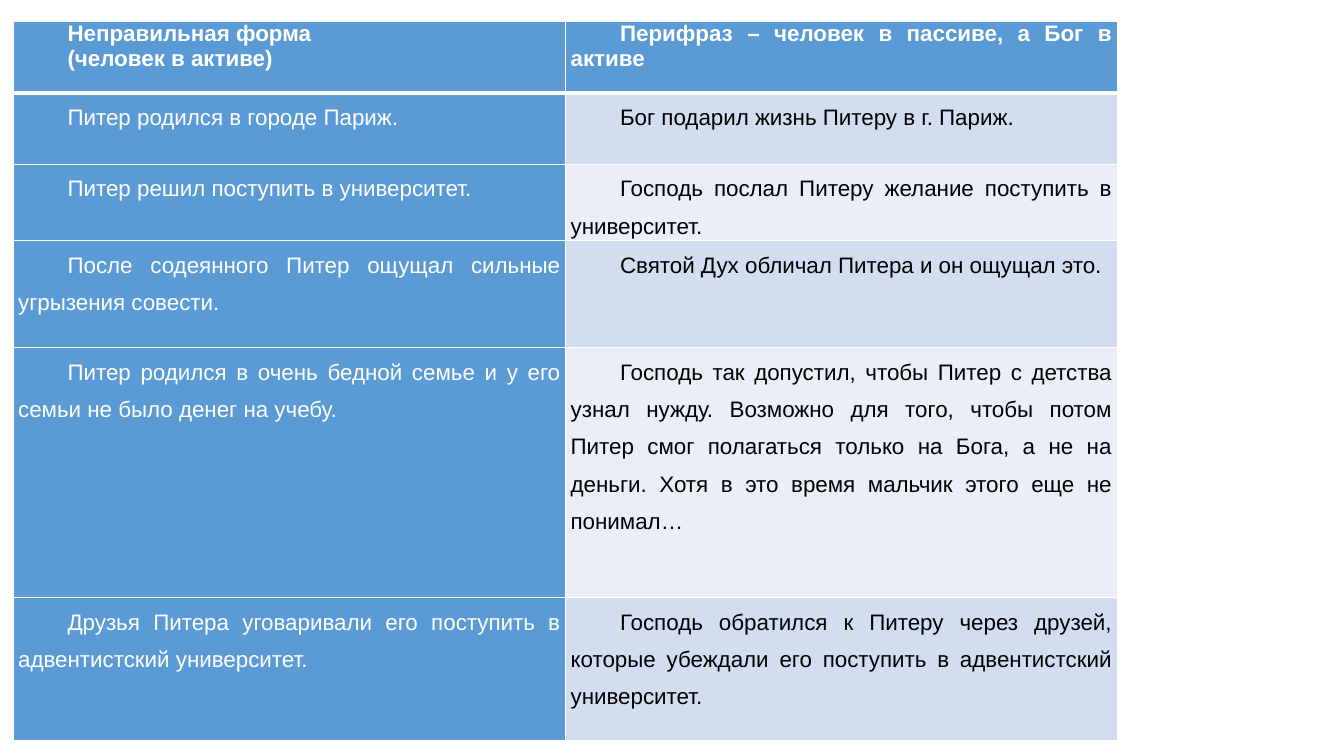
from lxml import etree
from pptx import Presentation
from pptx.dml.color import RGBColor
from pptx.enum.text import PP_ALIGN
from pptx.oxml.ns import qn
from pptx.util import Inches, Pt

JUSTIFY = PP_ALIGN.JUSTIFY
WHITE = RGBColor(0xFF, 0xFF, 0xFF)
BLACK = RGBColor(0x00, 0x00, 0x00)
BLUE = RGBColor(0x5B, 0x9B, 0xD5)
BAND_DARK = RGBColor(0xD2, 0xDE, 0xEF)
BAND_LIGHT = RGBColor(0xEA, 0xEF, 0xF7)

COL_WIDTHS = [5.48, 5.47]
ROW_HEIGHTS = [0.71, 0.71, 0.76, 1.06, 2.48, 1.42]
ROWS = [
    (["Неправильная форма", "(человек в активе)"],
     ["Перифраз – человек в пассиве, а Бог в активе"]),
    (["Питер родился в городе Париж."],
     ["Бог подарил жизнь Питеру в г. Париж."]),
    (["Питер решил поступить в университет."],
     ["Господь послал Питеру желание поступить в университет."]),
    (["После содеянного Питер ощущал сильные угрызения совести."],
     ["Святой Дух обличал Питера и он ощущал это."]),
    (["Питер родился в очень бедной семье и у его семьи не было денег на учебу."],
     ["Господь так допустил, чтобы Питер с детства узнал нужду. "
      "Возможно для того, чтобы потом Питер смог полагаться только на Бога, "
      "а не на деньги. Хотя в это время мальчик этого еще не понимал…"]),
    (["Друзья Питера уговаривали его поступить в адвентистский университет."],
     ["Господь обратился к Питеру через друзей, которые убеждали его "
      "поступить в адвентистский университет."]),
]


class SlideBuilder:
    font = "Arial"
    size = Pt(16)
    indent = Inches(0.49)

    def __init__(self, s):
        self.s = s

    def borders(self, cell, bottom):
        tcPr = cell._tc.get_or_add_tcPr()
        for side, width in (("L", 1), ("R", 1), ("T", 1), ("B", bottom)):
            ln = etree.SubElement(tcPr, qn(f"a:ln{side}"), w=str(Pt(width)))
            fill = etree.SubElement(ln, qn("a:solidFill"))
            etree.SubElement(fill, qn("a:srgbClr"), val=str(WHITE))

    def paragraph(self, p, text, color, header):
        p.alignment = JUSTIFY
        pPr = p._p.get_or_add_pPr()
        pPr.set("marL", "0")
        pPr.set("indent", str(self.indent))
        if not header:
            p.line_spacing = 1.5
        r = p.add_run()
        r.text = text
        r.font.name = self.font
        r.font.size = self.size
        r.font.bold = header
        r.font.color.rgb = color

    def cell(self, cell, lines, fill, color, header):
        cell.margin_left = cell.margin_right = Inches(0.05)
        cell.margin_top = cell.margin_bottom = 0
        self.borders(cell, 3 if header else 1)
        cell.fill.solid()
        cell.fill.fore_color.rgb = fill
        tf = cell.text_frame
        for i, text in enumerate(lines):
            p = tf.add_paragraph() if i else tf.paragraphs[0]
            self.paragraph(p, text, color, header)

    def table(self, left, top, widths, heights, rows):
        frame = self.s.shapes.add_table(
            len(rows), len(widths), Inches(left), Inches(top),
            Inches(sum(widths)), Inches(sum(heights)))
        table = frame.table
        for column, width in zip(table.columns, widths):
            column.width = Inches(width)
        for row, height in zip(table.rows, heights):
            row.height = Inches(height)
        for i, row in enumerate(rows):
            band = BAND_DARK if i % 2 else BAND_LIGHT
            for j, lines in enumerate(row):
                accent = i == 0 or j == 0
                self.cell(table.cell(i, j), lines, BLUE if accent else band,
                          WHITE if accent else BLACK, i == 0)


def main():
    prs = Presentation()
    prs.slide_width = Inches(13.33)
    prs.slide_height = Inches(7.5)
    s = prs.slides.add_slide(prs.slide_layouts[6])
    SlideBuilder(s).table(0.13, 0.21, COL_WIDTHS, ROW_HEIGHTS, ROWS)
    prs.save("out.pptx")


if __name__ == "__main__":
    main()
